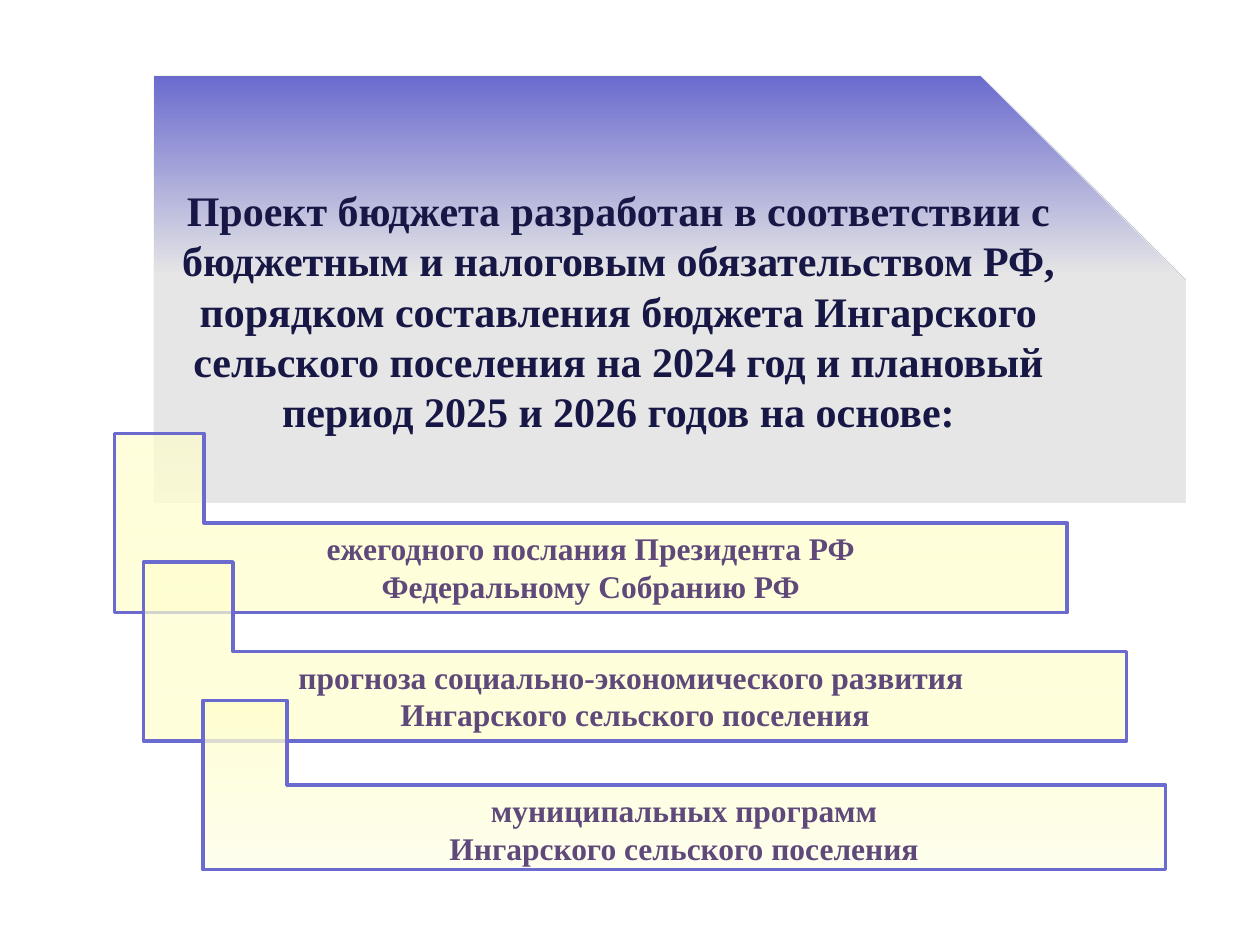
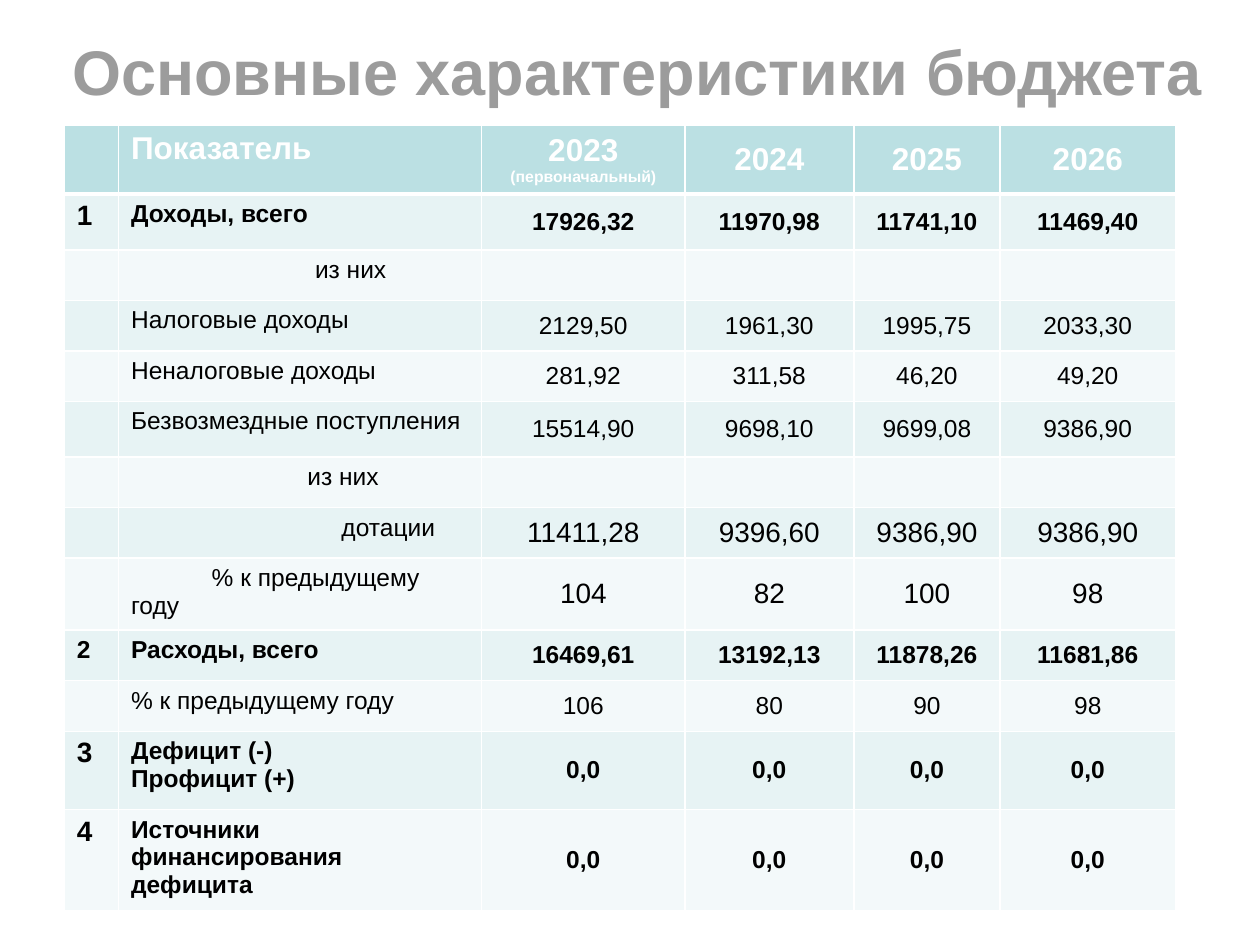
from dataclasses import dataclass

from lxml import etree
from pptx import Presentation
from pptx.dml.color import RGBColor
from pptx.enum.shapes import MSO_SHAPE
from pptx.enum.text import MSO_ANCHOR, MSO_AUTO_SIZE, PP_ALIGN
from pptx.oxml.ns import qn
from pptx.util import Inches, Pt

SNIPPED = MSO_SHAPE.SNIP_1_RECTANGLE
CORNER = MSO_SHAPE.CORNER
TOP, MIDDLE = MSO_ANCHOR.TOP, MSO_ANCHOR.MIDDLE
LEFT, CENTER = PP_ALIGN.LEFT, PP_ALIGN.CENTER
GROW = MSO_AUTO_SIZE.SHAPE_TO_FIT_TEXT
PAGE_WIDTH, PAGE_HEIGHT = Inches(10), Inches(7.5)
COLUMN, ROW = PAGE_WIDTH / 100, PAGE_HEIGHT / 75


@dataclass(frozen=True)
class Theme:
    serif: str = "Times New Roman"
    sans: str = "Arial"
    violet: str = "6B6BCF"
    grey: str = "E6E6E6"
    pale_green: str = "EAF1DD"
    navy: str = "171745"
    plum: str = "5F497A"
    cream: str = "FFFFCC"
    title_grey: str = "9C9C9C"
    header: str = "BBE0E3"
    bands: tuple = ("E7F3F4", "F3F9FA")
    white: str = "FFFFFF"
    black: str = "000000"
    title: int = 36
    lead: int = 24
    body: int = 18
    figure: int = 16
    label: int = 14
    note: int = 9


THEME = Theme()


@dataclass(frozen=True)
class Box:
    left: float
    top: float
    width: float
    height: float

    def place(self):
        return (round(self.left * COLUMN), round(self.top * ROW),
                round(self.width * COLUMN), round(self.height * ROW))


@dataclass(frozen=True)
class Record:
    height: float
    number: str
    labels: tuple
    values: tuple = ("",) * 4
    bold: bool = False
    indent: float = 0
    number_size: int = THEME.figure
    value_size: int = THEME.label


STEPS = (
    (Box(9.1, 34.4, 75.6, 14.2), 64, "FFFFDB",
     ("ежегодного послания Президента РФ", "Федеральному Собранию РФ")),
    (Box(11.4, 44.6, 78, 14.2), 60, "FFFFDB",
     ("прогноза социально-экономического развития ", "Ингарского сельского поселения")),
    (Box(16.1, 55.6, 76.4, 13.4), 70, "FFFFEF",
     ("муниципальных программ", "Ингарского сельского поселения")),
)
COLUMN_WIDTHS = (4.3, 28.8, 16.1, 13.4, 11.6, 13.9)
HEADER_HEIGHT = 5.4
HEADINGS = ("", "Показатель", "2023", "2024", "2025", "2026")
ZEROS = ("0,0",) * 4
RECORDS = (
    Record(4.4, "1", ("Доходы, всего",),
           ("17926,32", "11970,98", "11741,10", "11469,40"), bold=True),
    Record(4, "", ("из них",), indent=14.6),
    Record(4, "", ("Налоговые доходы",), ("2129,50", "1961,30", "1995,75", "2033,30")),
    Record(4, "", ("Неналоговые доходы",), ("281,92", "311,58", "46,20", "49,20")),
    Record(4.4, "", ("Безвозмездные поступления",),
           ("15514,90", "9698,10", "9699,08", "9386,90")),
    Record(4, "", ("из них",), indent=14),
    Record(4, "", ("дотации",), ("11411,28", "9396,60", "9386,90", "9386,90"),
           indent=16.7, value_size=THEME.figure),
    Record(5.7, "", ("% к предыдущему году",), ("104", "82", "100", "98"),
           indent=6.4, value_size=THEME.figure),
    Record(4, "2", ("Расходы, всего",),
           ("16469,61", "13192,13", "11878,26", "11681,86"),
           bold=True, number_size=THEME.label),
    Record(4, "", ("% к предыдущему году",), ("106", "80", "90", "98")),
    Record(6.2, "3", ("Дефицит (-)", "Профицит (+)"), ZEROS, bold=True),
    Record(8, "4", ("Источники финансирования дефицита",), ZEROS, bold=True),
)


def color(value):
    return RGBColor.from_string(value)


def write(frame, lines, font, ink, sizes, bold=True, align=CENTER, indent=0):
    for index, (line, size) in enumerate(zip(lines, sizes)):
        para = frame.paragraphs[0] if index == 0 else frame.add_paragraph()
        para.alignment = align
        if indent:
            para._p.get_or_add_pPr().set("indent", str(round(indent * COLUMN)))
        span = para.add_run()
        span.text = line
        span.font.name = font
        span.font.size = Pt(size)
        span.font.bold = bold
        span.font.color.rgb = color(ink)


def add_panel(page, preset, box, stops, line, width):
    panel = page.shapes.add_shape(preset, *box.place())
    panel.shadow.inherit = False
    panel.fill.gradient()
    panel.fill.gradient_angle = 270
    for stop, (position, shade, opacity) in zip(panel.fill.gradient_stops, stops):
        stop.position = position
        stop.color.rgb = color(shade)
        if opacity < 100:
            tint = stop._gs.find(qn("a:srgbClr"))
            etree.SubElement(tint, qn("a:alpha"), val=str(opacity * 1000))
    panel.line.color.rgb = color(line)
    panel.line.width = Pt(width)
    panel.text_frame.word_wrap = True
    panel.text_frame.vertical_anchor = TOP
    return panel


def add_lead(page, box):
    stops = ((0, THEME.violet, 100), (0.47, THEME.grey, 100))
    lead = add_panel(page, SNIPPED, box, stops, THEME.pale_green, 0.25)
    lead.adjustments[0] = 0.48
    text = ("Проект бюджета разработан в соответствии с бюджетным и налоговым "
            "обязательством РФ, порядком составления бюджета Ингарского сельского "
            "поселения на 2024 год и плановый период 2025 и 2026 годов на основе:")
    write(lead.text_frame, (text,), THEME.serif, THEME.navy, (THEME.lead,))


def add_step(page, box, opacity, end_shade, lines):
    stops = ((0, THEME.cream, opacity), (1, end_shade, 100))
    step = add_panel(page, CORNER, box, stops, THEME.violet, 2)
    write(step.text_frame, lines, THEME.serif, THEME.plum, (THEME.body,) * len(lines))


def add_title(page, box, text):
    title = page.shapes.add_textbox(*box.place())
    title.text_frame.word_wrap = False
    title.text_frame.auto_size = GROW
    write(title.text_frame, (text,), THEME.sans, THEME.title_grey, (THEME.title,))


def style_cell(cell, fill, top=1, bottom=1):
    properties = cell._tc.get_or_add_tcPr()
    for side, width in (("L", 1), ("R", 1), ("T", top), ("B", bottom)):
        border = etree.SubElement(properties, qn(f"a:ln{side}"), w=str(Pt(width)))
        solid = etree.SubElement(border, qn("a:solidFill"))
        etree.SubElement(solid, qn("a:srgbClr"), val=THEME.white)
    cell.fill.solid()
    cell.fill.fore_color.rgb = color(fill)


def fill_header(cells):
    for index, (cell, heading) in enumerate(zip(cells, HEADINGS)):
        style_cell(cell, THEME.header, bottom=3)
        if not heading:
            continue
        lines = (heading, "(первоначальный)") if heading == "2023" else (heading,)
        cell.vertical_anchor = MIDDLE if index > 1 else TOP
        write(cell.text_frame, lines, THEME.sans, THEME.white,
              (THEME.body, THEME.note), align=CENTER if index > 1 else LEFT)


def fill_record(cells, record, fill, top):
    for cell in cells:
        style_cell(cell, fill, top=top)
    number, label, *values = cells
    if record.number:
        write(number.text_frame, (record.number,), THEME.sans, THEME.black,
              (record.number_size,), align=LEFT)
    write(label.text_frame, record.labels, THEME.sans, THEME.black,
          (THEME.label,) * len(record.labels), record.bold, LEFT, record.indent)
    for cell, value in zip(values, record.values):
        cell.vertical_anchor = MIDDLE
        if value:
            write(cell.text_frame, (value,), THEME.sans, THEME.black,
                  (record.value_size,), record.bold)


def add_budget_table(page, box):
    table = page.shapes.add_table(
        len(RECORDS) + 1, len(COLUMN_WIDTHS), *box.place()).table
    for column, width in zip(table.columns, COLUMN_WIDTHS):
        column.width = round(box.width * width / sum(COLUMN_WIDTHS) * COLUMN)
    heights = (HEADER_HEIGHT, *(record.height for record in RECORDS))
    for row, height in zip(table.rows, heights):
        row.height = round(box.height * height / sum(heights) * ROW)
    header, *body = table.rows
    fill_header(header.cells)
    for index, (row, record) in enumerate(zip(body, RECORDS)):
        fill_record(list(row.cells), record, THEME.bands[index % 2], 1 if index else 3)


def build_basis(page):
    add_lead(page, Box(12.2, 6, 81.9, 33.9))
    for step in STEPS:
        add_step(page, *step)


def build_budget(page):
    add_title(page, Box(4.3, 2.1, 92.6, 7.1), "Основные характеристики бюджета")
    add_budget_table(page, Box(5.1, 9.9, 88.2, 62.3))


def main():
    deck = Presentation()
    deck.slide_width, deck.slide_height = PAGE_WIDTH, PAGE_HEIGHT
    blank = deck.slide_layouts[6]
    for build in (build_basis, build_budget):
        build(deck.slides.add_slide(blank))
    deck.save("out.pptx")


if __name__ == "__main__":
    main()
